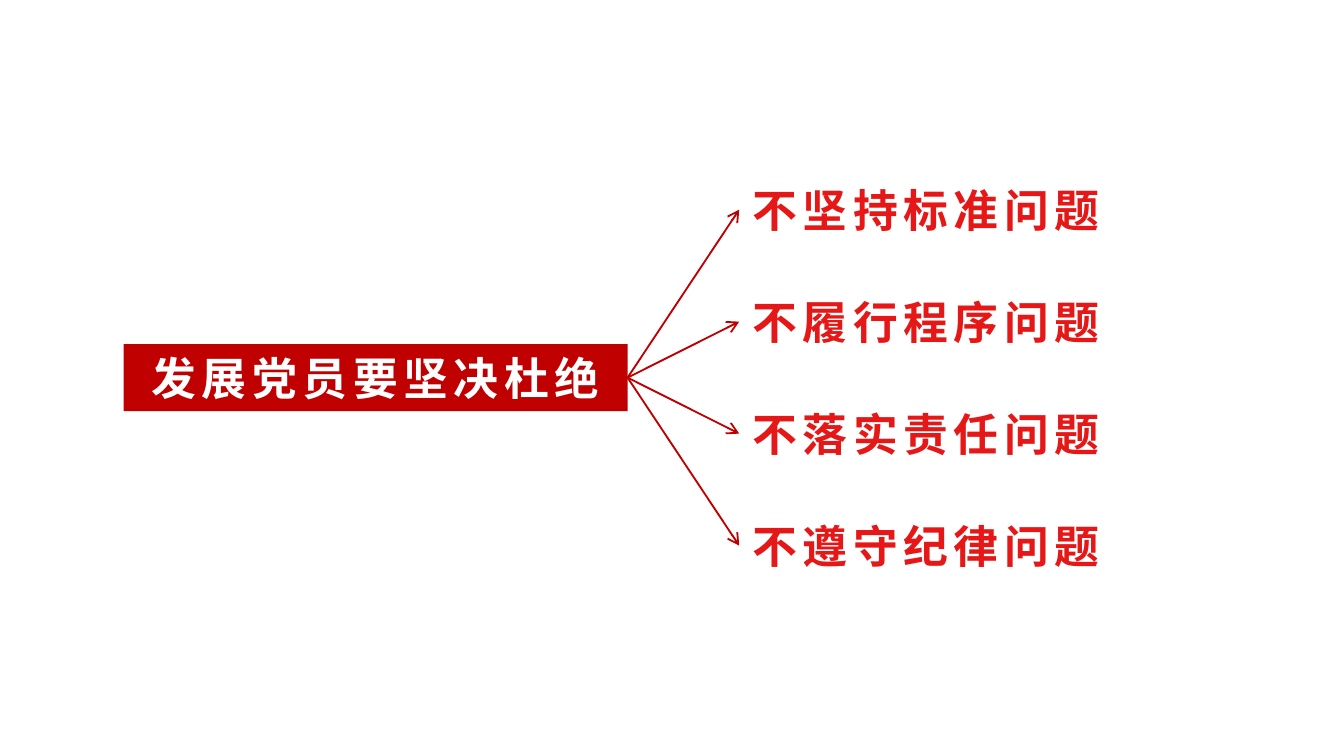
from dataclasses import dataclass

import lxml.etree
import pptx
import pptx.dml.color
import pptx.enum.shapes
import pptx.enum.text
import pptx.oxml.ns
import pptx.util

Inches = pptx.util.Inches
qn = pptx.oxml.ns.qn
Align = pptx.enum.text.PP_ALIGN


@dataclass(frozen=True)
class Theme:
    font: str = "Noto Sans CJK SC"
    size: int = 24
    tracking: int = 3
    banner: str = "C00000"
    banner_text: str = "FFFFFF"
    problem_text: str = "E61817"
    arrow_width: int = 1


THEME = Theme()
SLIDE_WIDTH = 10
SLIDE_HEIGHT = SLIDE_WIDTH * 9 / 16
HEADING = "发展党员要坚决杜绝"
PROBLEMS = ["不坚持标准问题", "不履行程序问题", "不落实责任问题", "不遵守纪律问题"]
LEFT_SIDE, RIGHT_SIDE = 1, 3


def rgb(value):
    return pptx.dml.color.RGBColor.from_string(value)


def place(shape, left, top, width, height):
    shape.left, shape.top = Inches(left), Inches(top)
    shape.width, shape.height = Inches(width), Inches(height)


def write(shape, words, color, align, wrap):
    """Put one bold, letter-spaced line in the middle of a shape."""
    frame = shape.text_frame
    frame.text = words
    frame.word_wrap = wrap
    frame.auto_size = pptx.enum.text.MSO_AUTO_SIZE.NONE
    frame.vertical_anchor = pptx.enum.text.MSO_ANCHOR.MIDDLE
    frame.margin_left = frame.margin_right = Inches(0.1)
    frame.margin_top = frame.margin_bottom = 0
    line = frame.paragraphs[0]
    line.alignment = align
    font = line.font
    font.name, font.size, font.bold = THEME.font, pptx.util.Pt(THEME.size), True
    font.color.rgb = rgb(color)
    # East Asian typeface and letter spacing
    properties = line._p.pPr.find(qn("a:defRPr"))
    properties.set("spc", str(THEME.tracking * 100))
    east_asian = lxml.etree.Element(qn("a:ea"), typeface=THEME.font)
    properties.find(qn("a:latin")).addnext(east_asian)


def add_banner(slide, left, top, width, height):
    banner = slide.shapes.title
    place(banner, left, top, width, height)
    banner.fill.solid()
    banner.fill.fore_color.rgb = rgb(THEME.banner)
    write(banner, HEADING, THEME.banner_text, Align.CENTER, True)
    return banner


def add_problems(slide, left, top, width, height, row_height=0.5):
    """Spread the problems evenly from the top to the bottom of the box."""
    pitch = (height - row_height) / (len(PROBLEMS) - 1)
    rows = []
    for index, words in enumerate(PROBLEMS):
        problem = slide.shapes.add_textbox(0, 0, 0, 0)
        place(problem, left, top + index * pitch, width, row_height)
        write(problem, words, THEME.problem_text, Align.LEFT, False)
        rows.append(problem)
    return rows


def add_arrow(slide, banner, problem):
    arrow = slide.shapes.add_connector(
        pptx.enum.shapes.MSO_CONNECTOR.STRAIGHT, 0, 0, 0, 0)
    arrow.begin_connect(banner, RIGHT_SIDE)
    arrow.end_connect(problem, LEFT_SIDE)
    arrow.line.color.rgb = rgb(THEME.banner)
    arrow.line.width = pptx.util.Pt(THEME.arrow_width)
    outline = arrow._element.spPr.find(qn("a:ln"))
    lxml.etree.SubElement(outline, qn("a:tailEnd"), type="arrow")
    lxml.etree.SubElement(arrow._element.spPr, qn("a:effectLst"))


def main():
    deck = pptx.Presentation()
    deck.slide_width, deck.slide_height = Inches(SLIDE_WIDTH), Inches(SLIDE_HEIGHT)
    slide = deck.slides.add_slide(deck.slide_layouts[5])

    # Heading on the left, the four problems on the right
    banner = add_banner(slide, 0.92, 2.56, 3.75, 0.5)
    problems = add_problems(slide, 5.5, 1.31, 2.83, 3)

    # One arrow from the heading to each problem
    for problem in problems:
        add_arrow(slide, banner, problem)

    deck.save("out.pptx")


if __name__ == "__main__":
    main()
